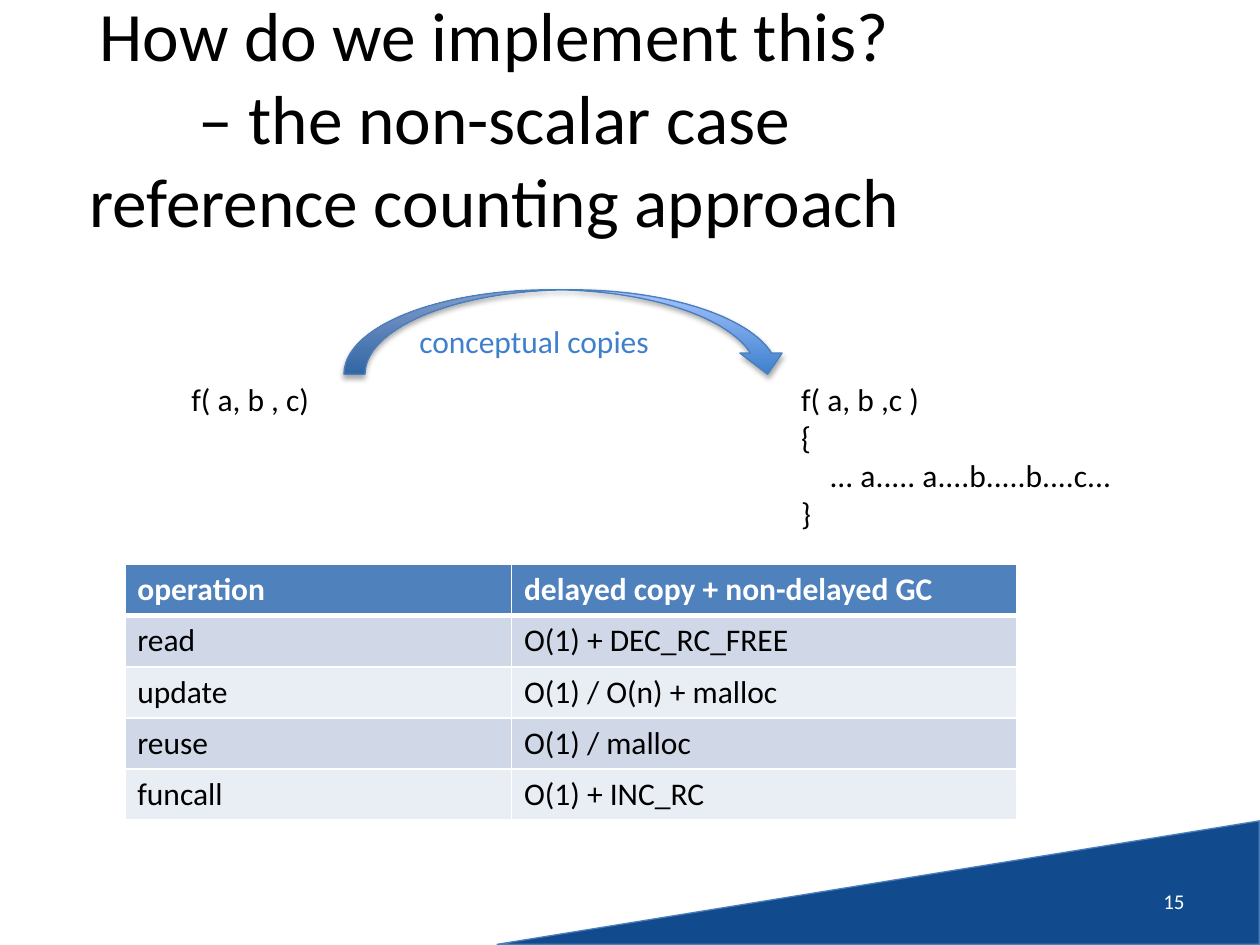
from dataclasses import dataclass

from lxml.etree import SubElement
from pptx import Presentation
from pptx.dml.color import RGBColor
from pptx.enum.shapes import MSO_SHAPE
from pptx.enum.text import MSO_ANCHOR, PP_ALIGN
from pptx.oxml.ns import qn
from pptx.util import Inches, Pt


@dataclass(frozen=True)
class Theme:
    font: str = "Calibri"
    ink: str = "000000"
    paper: str = "FFFFFF"
    navy: str = "114B8E"
    outline: str = "4B7EBC"
    accent: str = "3F80CD"
    arrow: tuple = ("3F80CE", "A4C4FF")
    header: str = "4F81BD"
    bands: tuple = ("D0D8E8", "E9EDF4")
    title_size: float = 39.6
    body_size: float = 18
    number_size: float = 12


def color(code):
    return RGBColor.from_string(code)


def assign(target, values):
    for name, value in values.items():
        setattr(target, name, value)


class SlideBuilder:
    COLUMNS, ROWS = 100, 75

    def __init__(self, deck, theme):
        self.deck, self.theme = deck, theme
        self.page = deck.slides.add_slide(deck.slide_layouts[6])

    def across(self, columns):
        return round(self.deck.slide_width * columns / self.COLUMNS)

    def down(self, rows):
        return round(self.deck.slide_height * rows / self.ROWS)

    def place(self, left, top, width, height):
        return self.across(left), self.down(top), self.across(width), self.down(height)

    def fill_text(self, frame, lines, size, ink, align=PP_ALIGN.LEFT, bold=False):
        for index, line in enumerate(lines):
            para = frame.paragraphs[0] if index == 0 else frame.add_paragraph()
            para.text = line
            para.alignment = align
            for span in para.runs:
                assign(span.font, {"name": self.theme.font, "size": Pt(size), "bold": bold})
                span.font.color.rgb = color(ink)

    def text(self, area, lines, size=None, ink=None, align=PP_ALIGN.LEFT,
             anchor=MSO_ANCHOR.TOP, wrap=False):
        box = self.page.shapes.add_textbox(*self.place(*area))
        assign(box.text_frame, {"word_wrap": wrap, "vertical_anchor": anchor})
        self.fill_text(box.text_frame, lines, size or self.theme.body_size,
                       ink or self.theme.ink, align)

    def shape(self, kind, area, fills, rotation=0):
        shape = self.page.shapes.add_shape(kind, *self.place(*area))
        shape.rotation = rotation
        if len(fills) == 1:
            shape.fill.solid()
            shape.fill.fore_color.rgb = color(fills[0])
        else:
            shape.fill.gradient()
            shape.fill.gradient_angle = 90
            for stop, code in zip(shape.fill.gradient_stops, fills):
                stop.color.rgb = color(code)
        shape.line.color.rgb = color(self.theme.outline)
        shape.line.width = Pt(0.75)
        self.cast_shadow(shape)

    def cast_shadow(self, shape):
        shape.shadow.inherit = False
        effects = shape._element.spPr.find(qn("a:effectLst"))
        shadow = SubElement(effects, qn("a:outerShdw"), blurRad=str(Pt(3.1)),
                            dist=str(Pt(1.8)), dir="5400000", rotWithShape="0")
        tint = SubElement(shadow, qn("a:srgbClr"), val=self.theme.ink)
        SubElement(tint, qn("a:alpha"), val="35000")

    def border(self, cell, widths):
        properties = cell._tc.get_or_add_tcPr()
        for side, width in widths.items():
            line = SubElement(properties, qn(f"a:ln{side}"), w=str(Pt(width)))
            fill = SubElement(line, qn("a:solidFill"))
            SubElement(fill, qn("a:srgbClr"), val=self.theme.paper)

    def table(self, left, top, widths, row_height, records):
        area = self.place(left, top, sum(widths), row_height * len(records))
        table = self.page.shapes.add_table(len(records), len(widths), *area).table
        for column, width in zip(table.columns, widths):
            column.width = self.across(width)
        for index, record in enumerate(records):
            heading = index == 0
            fill = self.theme.header if heading else self.theme.bands[(index - 1) % 2]
            ink = self.theme.paper if heading else self.theme.ink
            sides = {"L": 1, "R": 1, "T": 3 if index == 1 else 1, "B": 3 if heading else 1}
            for cell, entry in zip(table.rows[index].cells, record):
                self.border(cell, sides)
                cell.fill.solid()
                cell.fill.fore_color.rgb = color(fill)
                self.fill_text(cell.text_frame, [entry], self.theme.body_size, ink, bold=heading)


def main():
    deck = Presentation()
    assign(deck, {"slide_width": Inches(10), "slide_height": Inches(7.5)})
    theme = Theme()
    slide = SlideBuilder(deck, theme)

    slide.shape(MSO_SHAPE.RIGHT_TRIANGLE, (64.8, 39.8, 9.8, 60.5), [theme.navy], 270)
    slide.text((5, 3, 68.5, 12.5),
               ["How do we implement this? – the non-scalar case\vreference counting approach"],
               theme.title_size, align=PP_ALIGN.CENTER, anchor=MSO_ANCHOR.MIDDLE, wrap=True)
    slide.text((71.7, 69.5, 23.3, 4), ["15"], theme.number_size, theme.paper,
               PP_ALIGN.RIGHT, MSO_ANCHOR.MIDDLE, True)

    slide.text((14.2, 29.7, 11.5, 4), ["f( a, b , c)"])
    slide.shape(MSO_SHAPE.CURVED_DOWN_ARROW, (27.3, 23, 35.3, 6.7), theme.arrow)
    slide.text((62.6, 29.7, 26.9, 13.1),
               ["f( a, b ,c )", "{", "    ... a..... a....b.....b....c...", "}"])
    slide.text((32.3, 25.1, 20.4, 4), ["conceptual copies"], ink=theme.accent)

    slide.table(9.9, 44.8, (30.7, 40.1), 4.06, [
        ("operation", "delayed copy + non-delayed GC"),
        ("read", "O(1) + DEC_RC_FREE"),
        ("update", "O(1) / O(n) + malloc"),
        ("reuse", "O(1) / malloc"),
        ("funcall", "O(1) + INC_RC"),
    ])
    deck.save("out.pptx")


if __name__ == "__main__":
    main()
